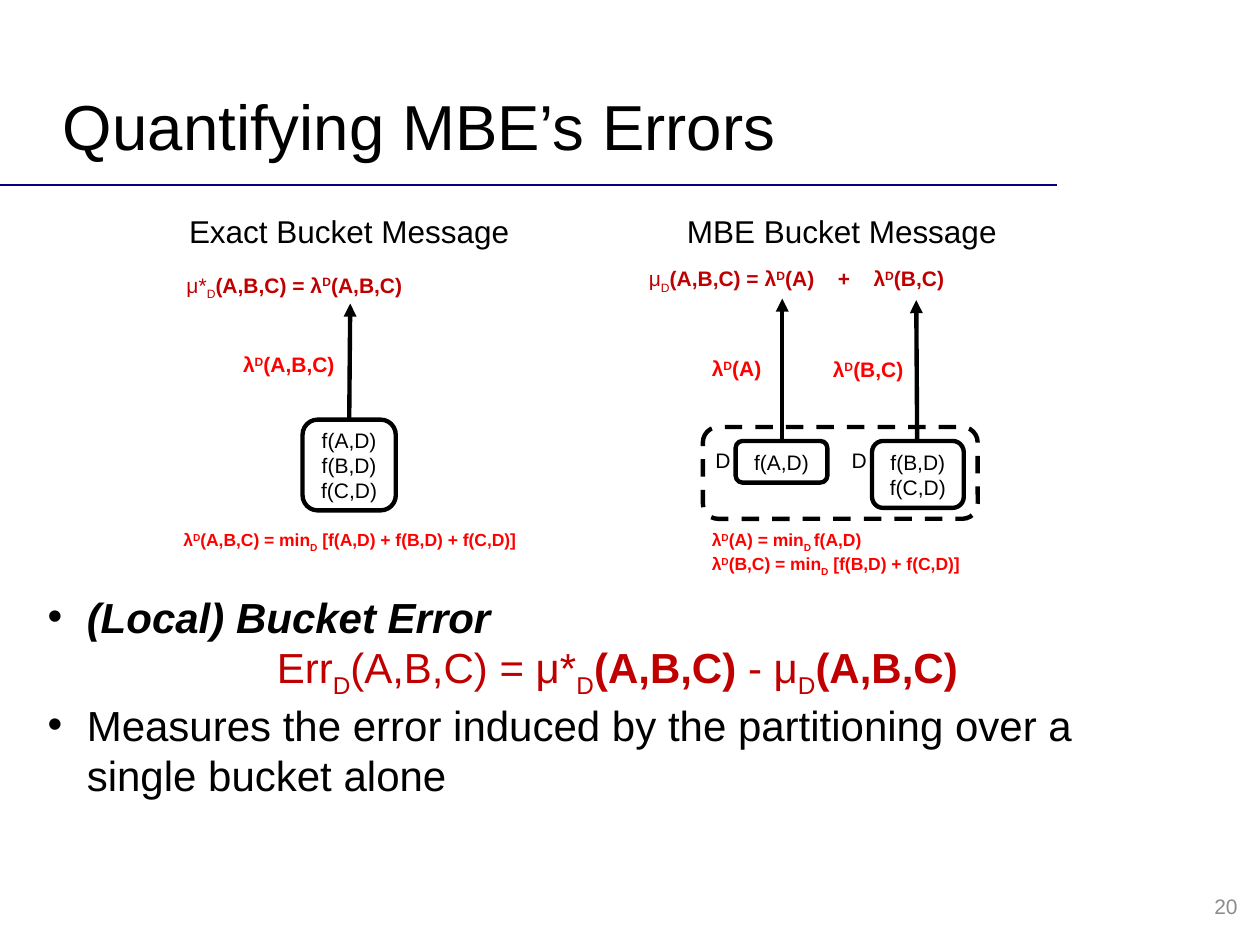
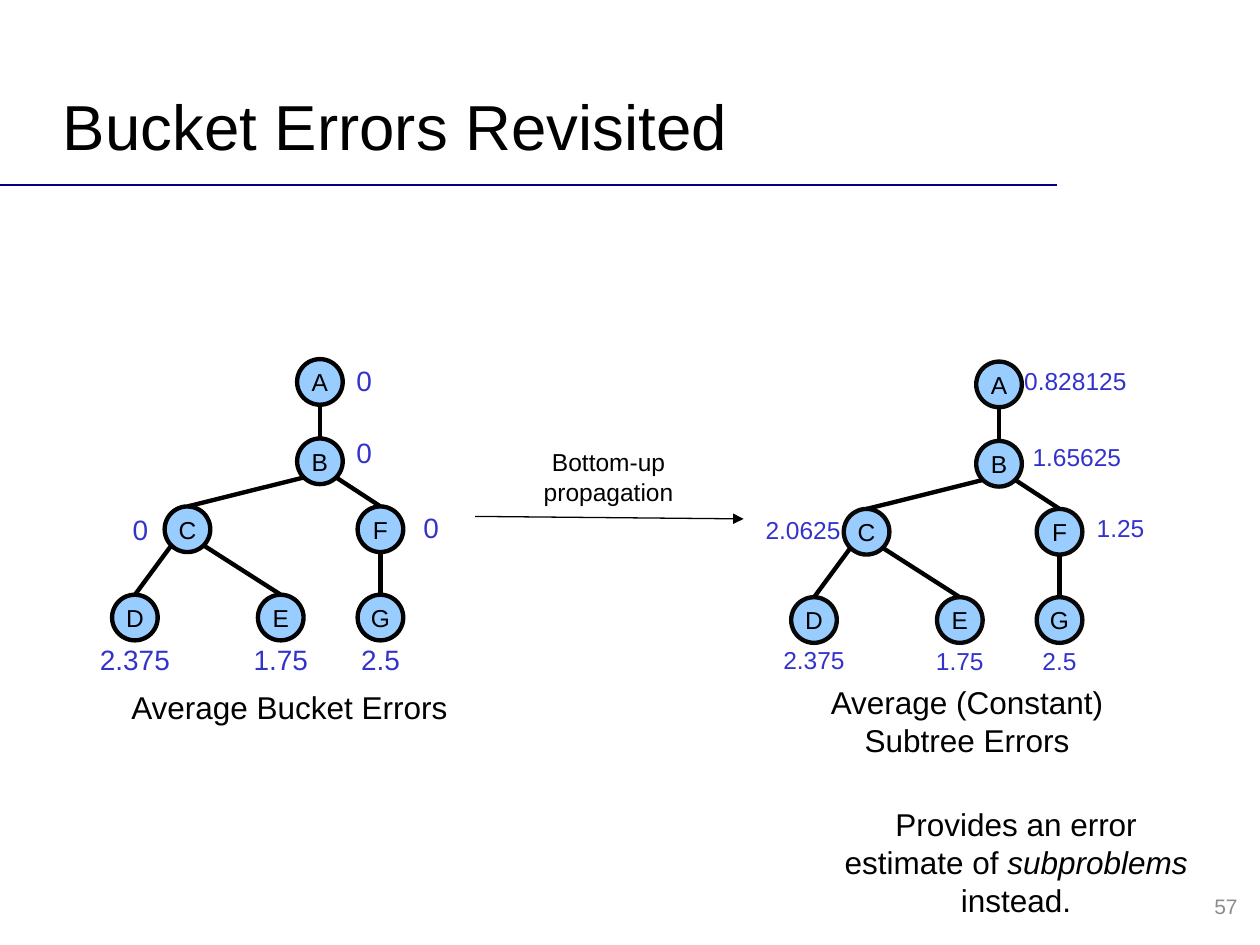
import math
from dataclasses import dataclass
from typing import NamedTuple, Optional, Union

import lxml.etree
import pptx
import pptx.dml.color
import pptx.enum.dml
import pptx.enum.shapes
import pptx.enum.text
import pptx.oxml.ns
import pptx.util

Cm, Pt = pptx.util.Cm, pptx.util.Pt
MSO_SHAPE = pptx.enum.shapes.MSO_SHAPE
ALIGN = {"l": pptx.enum.text.PP_ALIGN.LEFT, "c": pptx.enum.text.PP_ALIGN.CENTER,
         "r": pptx.enum.text.PP_ALIGN.RIGHT}
ANCHOR = {"t": pptx.enum.text.MSO_ANCHOR.TOP, "m": pptx.enum.text.MSO_ANCHOR.MIDDLE}

FONT = "Arial"
COLORS = {"ink": "000000", "rule": "000080", "message": "FF0000", "error": "C00000",
          "node": "99CCFF", "node_edge": "080808", "value": "3333CC", "number": "8C8C8C"}


class Run(NamedTuple):
    text: str
    base: int = 0
    bold: Optional[bool] = None
    italic: Optional[bool] = None


class Box(NamedTuple):
    x: float
    y: float
    w: float
    h: float


@dataclass
class Para:
    runs: list
    align: Optional[str] = None
    color: Optional[str] = None
    bullet: bool = False
    tabs: tuple = ()


@dataclass
class Tree:
    dx: float
    dy: float
    edge: str
    size: float
    labels: dict  # node: (value, offset x, offset y)


SUB = Run("D", -25000)
SUP = Run("D", 30000)


def rgb(name: str) -> pptx.dml.color.RGBColor:
    return pptx.dml.color.RGBColor.from_string(COLORS[name])


def sub_element(parent, tag: str, **attrs: str):
    return lxml.etree.SubElement(parent, pptx.oxml.ns.qn(tag), **attrs)


# ---- Text ----
def write(sp, paras: Union[str, list], *, size: float, color: str = "ink", bold: bool = False,
          align: str = "l", anchor: str = "t", inset: tuple = (0.25, 0.13),
          spacing: Optional[float] = None) -> None:
    tf = sp.text_frame
    tf.word_wrap = True
    tf.vertical_anchor = ANCHOR[anchor]
    tf.margin_left = tf.margin_right = Cm(inset[0])
    tf.margin_top = tf.margin_bottom = Cm(inset[1])
    if isinstance(paras, str):
        paras = [Para([Run(paras)])]
    for i, para in enumerate(paras):
        p = tf.paragraphs[0] if i == 0 else tf.add_paragraph()
        p.alignment = ALIGN[para.align or align]
        if spacing:
            p.line_spacing = spacing
        pPr = p._p.get_or_add_pPr()
        if para.bullet:
            pPr.set("marL", str(Cm(0.79)))
            pPr.set("indent", str(-Cm(0.79)))
            sub_element(pPr, "a:buFont", typeface=FONT)
            sub_element(pPr, "a:buChar", char="•")
        if para.tabs:
            tab_list = sub_element(pPr, "a:tabLst")
            for pos in para.tabs:
                sub_element(tab_list, "a:tab", pos=str(Cm(pos)), algn="l")
        for run in para.runs:
            r = p.add_run()
            r.text = run.text
            r.font.name, r.font.size = FONT, Pt(size)
            r.font.bold = bold if run.bold is None else run.bold
            r.font.italic = run.italic
            r.font.color.rgb = rgb(para.color or color)
            if run.base:
                r._r.get_or_add_rPr().set("baseline", str(run.base))


def add_text(slide, box: Box, paras: Union[str, list], **fmt) -> None:
    write(slide.shapes.add_textbox(*map(Cm, box)), paras, **fmt)


# ---- Shapes and lines ----
def add_shape(slide, kind, box: Box, *, fill: Optional[str] = None, edge: str = "ink",
              dashed: bool = False):
    sp = slide.shapes.add_shape(kind, *map(Cm, box))
    sp.shadow.inherit = False
    if fill:
        sp.fill.solid()
        sp.fill.fore_color.rgb = rgb(fill)
    else:
        sp.fill.background()
    sp.line.color.rgb = rgb(edge)
    sp.line.width = Pt(2.5)
    if dashed:
        sp.line.dash_style = pptx.enum.dml.MSO_LINE.DASH
    return sp


def add_line(slide, x1: float, y1: float, x2: float, y2: float, *, color: str = "ink",
             width: float = 2.5, arrow: bool = False) -> None:
    line = slide.shapes.add_connector(pptx.enum.shapes.MSO_CONNECTOR.STRAIGHT,
                                      Cm(x1), Cm(y1), Cm(x2), Cm(y2))
    line.line.color.rgb = rgb(color)
    line.line.width = Pt(width)
    if arrow:
        sub_element(line.line._get_or_add_ln(), "a:tailEnd", type="triangle")
    sub_element(line._element.spPr, "a:effectLst")


def add_slide(prs, title: str, number: int):
    slide = prs.slides.add_slide(prs.slide_layouts[6])
    add_line(slide, 0, 3.73, 21.31, 3.73, color="rule", width=1.45)
    add_text(slide, Box(1.27, 1.73, 22.91, 1.73), title, size=36.3, anchor="m",
             inset=(0, 0), spacing=0.93)
    add_text(slide, Box(19.48, 17.75, 5.72, 1.02), str(number), size=12, color="number",
             align="r", anchor="m")
    return slide


# ---- Slide: quantifying errors ----
BUCKETS = [
    (Box(6.1, 8.46, 1.88, 1.83), ["f(A,D)", "f(B,D) f(C,D)"]),
    (Box(17.58, 8.89, 1.85, 1.35), ["f(B,D) f(C,D)"]),
    (Box(14.83, 8.89, 1.85, 0.84), ["f(A,D)"]),
]
MESSAGE_ARROWS = [(7.04, 8.43, 7.06, 6.12), (18.49, 8.89, 18.47, 6.05),
                  (15.77, 8.89, 15.77, 6.02)]
MESSAGES = [(4.65, 6.96, "(A,B,C)"), (14.1, 7.04, "(A)"), (16.54, 7.06, "(B,C)")]
HEADINGS = [(2.95, "Exact Bucket Message"), (12.88, "MBE Bucket Message")]


def lam(scope: str) -> list:
    return [Run("λ"), SUP, Run(scope)]


def build_quantifying(prs) -> None:
    slide = add_slide(prs, "Quantifying MBE’s Errors", 20)
    for x, heading in HEADINGS:
        add_text(slide, Box(x, 4.14, 8.18, 1.02), heading, size=18, align="c")

    # Buckets, their partition and outgoing messages
    add_shape(slide, MSO_SHAPE.ROUNDED_RECTANGLE, Box(14.17, 8.61, 5.54, 1.85), dashed=True)
    for box, functions in BUCKETS:
        sp = add_shape(slide, MSO_SHAPE.ROUNDED_RECTANGLE, box)
        write(sp, [Para([Run(f)]) for f in functions], size=12, align="c", anchor="m",
              inset=(0.1, 0.1))
    for x in (14.17, 16.92):
        add_text(slide, Box(x, 8.89, 0.95, 0.76), "D", size=12)
    for ends in MESSAGE_ARROWS:
        add_line(slide, *ends, arrow=True)
    for x, y, scope in MESSAGES:
        add_text(slide, Box(x, y, 2.7, 0.76), [Para(lam(scope))], size=12,
                 color="message", bold=True)

    # Message equations
    scope = Run("(A,B,C) = ")
    add_text(slide, Box(3.51, 5.36, 5.5, 0.76),
             [Para([Run("μ*", bold=False), SUB._replace(bold=False), scope,
                    *lam("(A,B,C)")])], size=12, color="error", bold=True)
    add_text(slide, Box(12.83, 5.23, 6.9, 0.76),
             [Para([Run("μ", bold=False), SUB._replace(bold=False), scope,
                    *lam("(A)\t+\t"), *lam("(B,C)")], tabs=(3.81, 4.53))],
             size=12, color="error", bold=True)

    # Message definitions
    fmt = dict(size=10, color="message", bold=True)
    add_text(slide, Box(3.33, 10.54, 7.44, 0.69),
             [Para([*lam("(A,B,C) = min"), SUB, Run(" [f(A,D) + f(B,D) + f(C,D)]")])],
             align="c", **fmt)
    add_text(slide, Box(14.1, 10.54, 5.92, 1.12),
             [Para([*lam("(A) = min"), SUB._replace(text="D "), Run("f(A,D)")]),
              Para([*lam("(B,C) = min"), SUB, Run(" [f(B,D) + f(C,D)]")])], **fmt)

    # Definition of the error
    add_text(slide, Box(0.71, 11.79, 23.47, 5.13), [
        Para([Run("(Local) Bucket Error", bold=True, italic=True)], bullet=True),
        Para([Run("Err"), SUB, Run("(A,B,C) = μ*"), SUB, Run("(A,B,C) ", bold=True),
              Run("- μ"), SUB, Run("(A,B,C)", bold=True)], align="c", color="error"),
        Para([Run("Measures the error induced by the partitioning over a single "
                  "bucket alone")], bullet=True),
    ], size=24)


# ---- Slide: bucket errors revisited ----
DIAMETER = 0.92
NODES = {"A": (6.45, 7.7), "B": (6.45, 9.3), "C": (3.78, 10.67), "F": (7.67, 10.67),
         "D": (2.72, 12.45), "E": (5.66, 12.45), "G": (7.67, 12.45)}
EDGES = ["AB", "BC", "BF", "CD", "CE", "FG"]
TREES = [
    Tree(0, 0, "ink", 16, {
        "A": ("0", 0.89, -0.04), "B": ("0", 0.89, -0.19), "C": ("0", -0.95, 0),
        "F": ("0", 1.02, -0.04), "D": ("2.375", 0, 0.84), "E": ("1.75", 0, 0.85),
        "G": ("2.5", 0, 0.85)}),
    Tree(13.69, 0.05, "node_edge", 14, {
        "A": ("0.828125", 1.54, -0.08), "B": ("1.65625", 1.57, -0.15),
        "C": ("2.0625", -1.28, -0.05), "F": ("1.25", 1.23, -0.08),
        "D": ("2.375", 0, 0.8), "E": ("1.75", 0, 0.81), "G": ("2.5", 0, 0.81)}),
]


def add_tree(slide, tree: Tree) -> None:
    radius = DIAMETER / 2
    diagonal = radius / math.sqrt(2)
    centres = {n: (x + tree.dx, y + tree.dy) for n, (x, y) in NODES.items()}
    for name, (x, y) in centres.items():
        sp = add_shape(slide, MSO_SHAPE.OVAL,
                       Box(x - radius, y - radius, DIAMETER, DIAMETER),
                       fill="node", edge=tree.edge)
        write(sp, name, size=14, align="c", anchor="m", inset=(0.03, 0.03))
    # Edges leave straight down, or diagonally towards a child at the side
    for parent, child in EDGES:
        (x1, y1), (x2, y2) = centres[parent], centres[child]
        if x1 == x2:
            start = (x1, y1 + radius)
        else:
            start = (x1 + math.copysign(diagonal, x2 - x1), y1 + diagonal)
        add_line(slide, *start, x2, y2 - radius)
    w, h = 2.6, 0.9
    for name, (value, dx, dy) in tree.labels.items():
        x, y = centres[name]
        add_text(slide, Box(x + dx - w / 2, y + dy - h / 2, w, h), value, size=tree.size,
                 color="value", align="c", anchor="m", inset=(0, 0))


def build_revisited(prs) -> None:
    slide = add_slide(prs, "Bucket Errors Revisited", 57)
    for tree in TREES:
        add_tree(slide, tree)
    add_line(slide, 9.58, 10.41, 14.99, 10.46, width=0.75, arrow=True)
    add_text(slide, Box(10.27, 8.89, 4, 1.45), "Bottom-up propagation", size=14, align="c")
    add_text(slide, Box(1.68, 13.74, 8.31, 1.02), "Average Bucket Errors", size=18, align="c")
    add_text(slide, Box(15.34, 13.64, 8.31, 1.8), "Average (Constant) Subtree Errors",
             size=18, align="c")
    add_text(slide, Box(16.61, 16.1, 7.75, 1.8),
             [Para([Run("Provides an error estimate of "), Run("subproblems", italic=True),
                    Run(" instead.")])], size=18, align="c")


def main() -> None:
    prs = pptx.Presentation()
    prs.slide_width, prs.slide_height = Cm(25.4), Cm(19.05)
    build_quantifying(prs)
    build_revisited(prs)
    prs.save("out.pptx")


if __name__ == "__main__":
    main()
